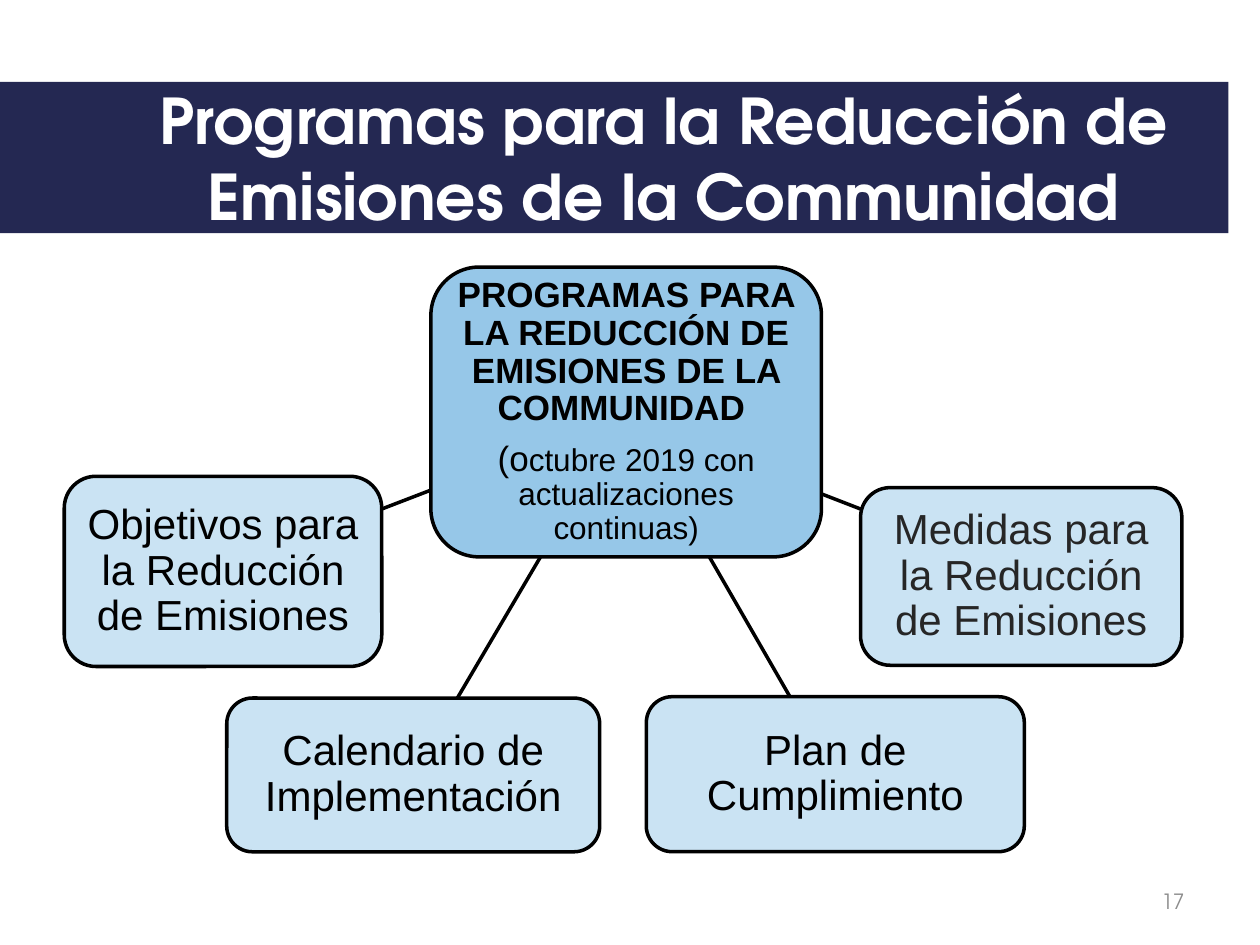
from lxml.etree import SubElement
from pptx import Presentation
from pptx.dml.color import RGBColor
from pptx.enum.shapes import MSO_CONNECTOR, MSO_SHAPE
from pptx.enum.text import MSO_ANCHOR, PP_ALIGN
from pptx.oxml.ns import qn
from pptx.util import Inches, Pt

NAVY = RGBColor(0x24, 0x28, 0x52)
BLUE = RGBColor(0x96, 0xC7, 0xE8)
PALE = RGBColor(0xCA, 0xE3, 0xF3)
BLACK = RGBColor(0, 0, 0)
CHARCOAL = RGBColor(0x26, 0x26, 0x26)
GRAY = RGBColor(0x8C, 0x8C, 0x8C)
WHITE = RGBColor(0xFF, 0xFF, 0xFF)


class ProgramSlide:
    """Draws the program diagram in one consistent style."""

    heading_font = "TeX Gyre Adventor"
    body_font = "Arial"
    line_width = Pt(2)

    def __init__(self, s):
        self.s = s

    def frame(self, sp, insets):
        tf = sp.text_frame
        tf.word_wrap = True
        tf.vertical_anchor = MSO_ANCHOR.MIDDLE
        tf.margin_left, tf.margin_top, tf.margin_right, tf.margin_bottom = map(Inches, insets)
        return tf

    def run(self, p, text, size, color, font, bold=False):
        r = p.add_run()
        r.text = text
        r.font.name = font
        r.font.size = Pt(size)
        r.font.bold = bold
        r.font.color.rgb = color

    def shape(self, kind, box, fill):
        sp = self.s.shapes.add_shape(kind, *map(Inches, box))
        sp.shadow.inherit = False
        sp.fill.solid()
        sp.fill.fore_color.rgb = fill
        return sp

    def title(self, box, text):
        sp = self.shape(MSO_SHAPE.RECTANGLE, box, NAVY)
        sp.line.fill.background()
        p = self.frame(sp, (0.7, 0.05, 0.1, 0.05)).paragraphs[0]
        p.alignment = PP_ALIGN.CENTER
        p._p.get_or_add_pPr().set("marL", str(Inches(0.18)))
        self.run(p, text, 36, WHITE, self.heading_font, True)

    def node(self, box, fill, paragraphs, inset=0.07):
        sp = self.shape(MSO_SHAPE.ROUNDED_RECTANGLE, box, fill)
        sp.line.color.rgb = BLACK
        sp.line.width = self.line_width
        tf = self.frame(sp, [inset] * 4)
        for i, runs in enumerate(paragraphs):
            p = tf.add_paragraph() if i else tf.paragraphs[0]
            p.alignment = PP_ALIGN.CENTER
            p.line_spacing = 0.9
            p.space_after = Pt(0.35 * runs[0][1])
            for text, size, color, bold in runs:
                self.run(p, text, size, color, self.body_font, bold)

    def link(self, start, end):
        c = self.s.shapes.add_connector(MSO_CONNECTOR.STRAIGHT, *map(Inches, start + end))
        c.line.color.rgb = BLACK
        c.line.width = self.line_width
        SubElement(c._element.spPr, qn("a:effectLst"))

    def number(self, box, text):
        sp = self.s.shapes.add_textbox(*map(Inches, box))
        p = self.frame(sp, (0.1, 0.05, 0.1, 0.05)).paragraphs[0]
        p.alignment = PP_ALIGN.RIGHT
        self.run(p, text, 12, GRAY, self.heading_font)


def main():
    prs = Presentation()
    prs.slide_width, prs.slide_height = Inches(10), Inches(7.5)
    slide = ProgramSlide(prs.slides.add_slide(prs.slide_layouts[6]))

    slide.title((0, 0.65, 9.75, 1.2), "Programas para la Reducción de Emisiones de la Communidad")
    slide.number((7.17, 6.95, 2.33, 0.4), "17")
    slide.node((3.42, 2.12, 3.1, 2.3), BLUE, [
        [("PROGRAMAS PARA LA REDUCCIÓN DE EMISIONES DE LA COMMUNIDAD ", 20, BLACK, True)],
        [("(o", 20, BLACK, False),
         ("ctubre 2019 con actualizaciones continuas)", 18, BLACK, False)],
    ], inset=0.06)

    branches = [
        ((4.29, 4.42), (3.63, 5.54), (1.8, 5.54, 2.96, 1.22),
         "Calendario de Implementación", BLACK),
        ((3.42, 3.89), (3.03, 4.04), (0.51, 3.78, 2.52, 1.51),
         "Objetivos para la Reducción de Emisiones", BLACK),
        ((6.52, 3.92), (6.83, 4.04), (6.83, 3.87, 2.55, 1.41),
         "Medidas para la Reducción de Emisiones", CHARCOAL),
        ((5.63, 4.42), (6.27, 5.53), (5.13, 5.53, 3, 1.23),
         "Plan de Cumplimiento", BLACK),
    ]
    for start, end, box, text, color in branches:
        slide.link(start, end)
        slide.node(box, PALE, [[(text, 24, color, False)]])

    prs.save("out.pptx")


if __name__ == "__main__":
    main()
